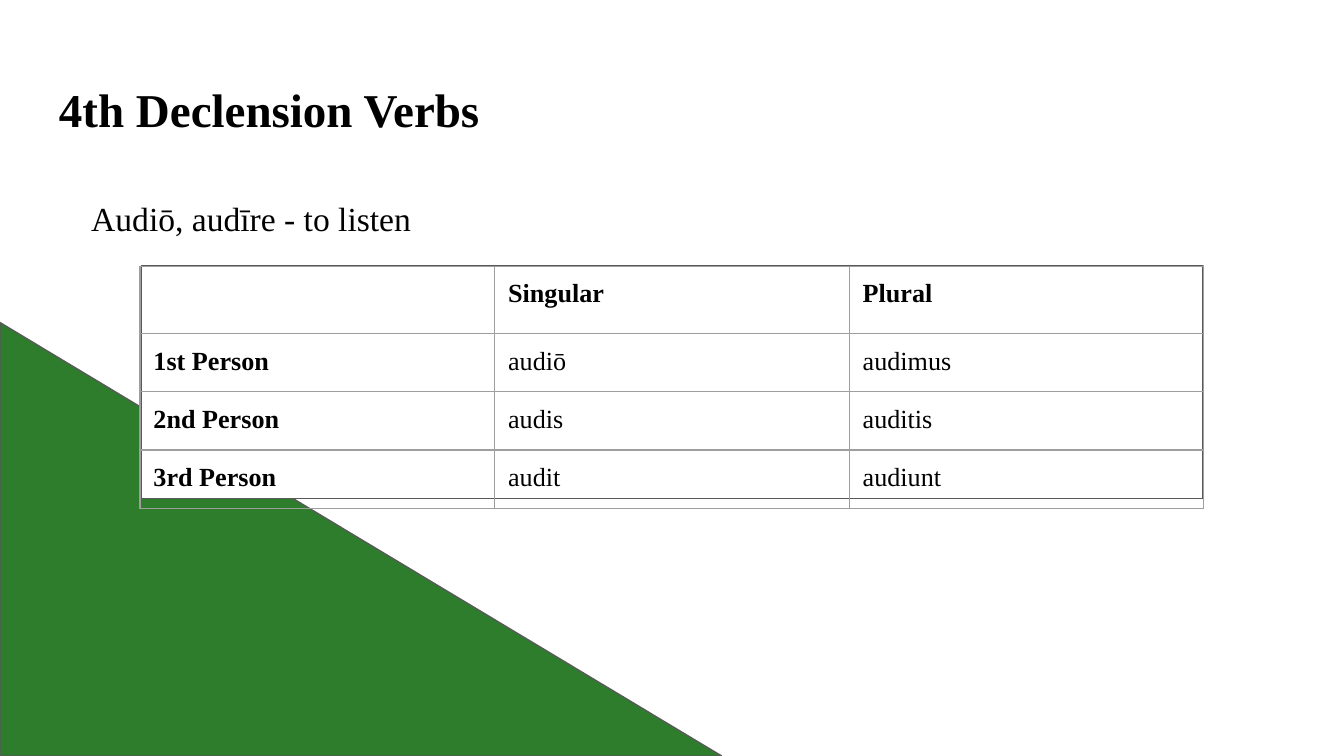
from lxml import etree
from pptx import Presentation
from pptx.dml.color import RGBColor
from pptx.enum import shapes, text
from pptx.oxml.ns import qn
from pptx.util import Pt

FONT = "Times New Roman"
INSET = 7.2
ROWS = [
    ["", "Singular", "Plural"],
    ["1st Person", "audiō", "audimus"],
    ["2nd Person", "audis", "auditis"],
    ["3rd Person", "audit", "audiunt"],
]


def color(value):
    return RGBColor.from_string(value)


def set_text(tf, content, size, bold=False):
    r = tf.paragraphs[0].add_run()
    r.text = content
    for name, value in {"name": FONT, "size": Pt(size), "bold": bold}.items():
        setattr(r.font, name, value)
    r.font.color.rgb = color("000000")


def set_margins(obj):
    for side in ("left", "top", "right", "bottom"):
        setattr(obj, f"margin_{side}", Pt(INSET))


def add_panel(slide, kind, box, fill):
    sp = slide.shapes.add_shape(kind, *map(Pt, box))
    sp.shadow.inherit = False
    sp.fill.solid()
    sp.fill.fore_color.rgb = color(fill)
    sp.line.color.rgb = color("595959")
    sp.line.width = Pt(0.75)


def add_label(slide, box, content, size, bold=False):
    tf = slide.shapes.add_textbox(*map(Pt, box)).text_frame
    set_margins(tf)
    tf.word_wrap = True
    tf.vertical_anchor = text.MSO_ANCHOR.BOTTOM
    set_text(tf, content, size, bold)


def set_borders(cell, value, width):
    tc_pr = cell._tc.get_or_add_tcPr()
    for i, side in enumerate(("lnL", "lnR", "lnT", "lnB")):
        ln = etree.Element(qn(f"a:{side}"), w=str(Pt(width)))
        fill = etree.SubElement(ln, qn("a:solidFill"))
        etree.SubElement(fill, qn("a:srgbClr"), val=value)
        tc_pr.insert(i, ln)


def add_verb_table(slide, box):
    x, y, w, h = box
    add_panel(slide, shapes.MSO_SHAPE.RECTANGLE, (x + 0.7, y, w - 1.2, 124.6), "FFFFFF")
    frame = slide.shapes.add_table(len(ROWS), len(ROWS[0]), *map(Pt, box))
    table = frame.table
    for name in ("first_row", "horz_banding"):
        setattr(table, name, False)
    for col in table.columns:
        col.width = Pt(w / len(ROWS[0]))
    for row in table.rows:
        row.height = Pt(h / len(ROWS))
    for i, row in enumerate(ROWS):
        for j, content in enumerate(row):
            cell = table.cell(i, j)
            set_margins(cell)
            cell.fill.background()
            set_borders(cell, "9E9E9E", 0.75)
            if content:
                set_text(cell.text_frame, content, 14, i == 0 or j == 0)


def build_slide(prs):
    slide = prs.slides.add_slide(prs.slide_layouts[6])
    add_panel(slide, shapes.MSO_SHAPE.RIGHT_TRIANGLE, (0, 172.8, 386.6, 232.2), "2D7D2D")
    add_label(slide, (24.5, 35.3, 671, 45.4), "4th Declension Verbs", 25.2, True)
    add_label(slide, (41.8, 98.6, 321, 36), "Audiō, audīre - to listen", 18)
    add_verb_table(slide, (75, 142.6, 570, 121))


def main():
    prs = Presentation()
    prs.slide_width, prs.slide_height = Pt(720), Pt(405)
    build_slide(prs)
    prs.save("out.pptx")


if __name__ == "__main__":
    main()
